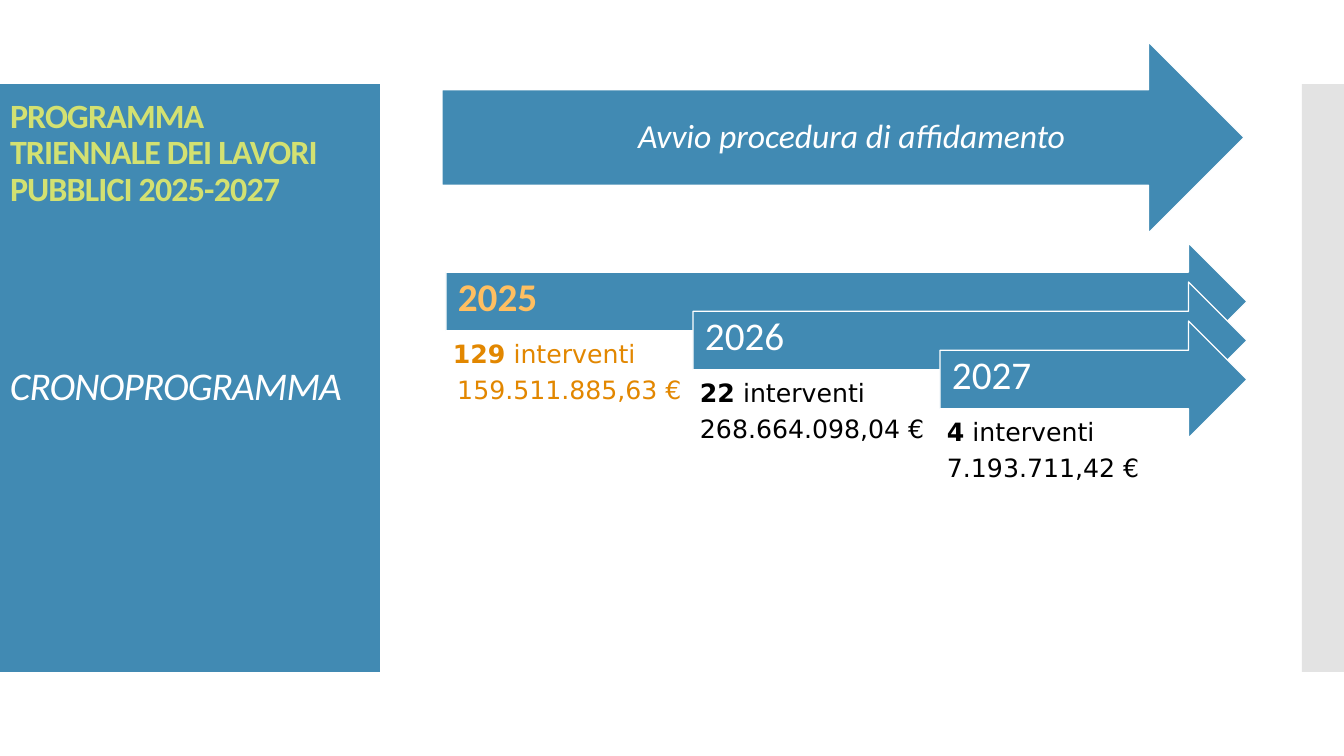
from pptx import Presentation
from pptx.dml.color import RGBColor
from pptx.enum.shapes import MSO_SHAPE
from pptx.enum.text import MSO_ANCHOR, MSO_AUTO_SIZE, PP_ALIGN
from pptx.util import Pt
from lxml.etree import SubElement
from pptx.oxml.ns import qn

TITLE = "PROGRAMMA TRIENNALE DEI LAVORI PUBBLICI 2025-2027"
SECTION = "CRONOPROGRAMMA"
PHASE = "Avvio procedura di affidamento"
YEARS = [
    ("2025", "129", "159.511.885,63 €", "amber", "orange", PP_ALIGN.CENTER, 133),
    ("2026", "22", "268.664.098,04 €", "white", "black", PP_ALIGN.LEFT, 225),
    ("2027", "4", "7.193.711,42 €", "white", "black", PP_ALIGN.LEFT, 222),
]
COLORS = {
    "blue": "418AB3", "grey": "C8C8C8", "lime": "D3E171", "amber": "FFBF61",
    "orange": "E28700", "white": "FFFFFF", "black": "000000",
}
EMU_PER_PX = 914400 / 100.8
SLIDE_W, SLIDE_H = 1344, 756
BAND_TOP, BAND_H = 84, 588
ARROW_LEFT, ARROW_TOP, ARROW_RIGHT, ARROW_H = 446, 243, 1247, 117
STEP_X, STEP_Y, NOTE_DROP = 247, 39, 92


def px(n):
    return round(n * EMU_PER_PX)


def rgb(name):
    return RGBColor.from_string(COLORS[name])


def add_shape(kind, x, y, w, h, fill, line=None, alpha=None):
    sp = s.shapes.add_shape(kind, px(x), px(y), px(w), px(h))
    sp.shadow.inherit = False
    sp.fill.solid()
    sp.fill.fore_color.rgb = rgb(fill)
    if alpha:
        color = sp.fill._xPr.find(qn("a:solidFill"))[0]
        SubElement(color, qn("a:alpha"), val=str(alpha * 1000))
    if line:
        sp.line.color.rgb = rgb(line)
        sp.line.width = Pt(0.85)
    else:
        sp.line.fill.background()
    return sp


def set_text(sp, paragraphs, size, color, font="Calibri", bold=False, italic=False,
             aligns=(PP_ALIGN.LEFT,), anchor=MSO_ANCHOR.MIDDLE,
             insets=(10, 0, 10, 0), after=0, spacing=0):
    tf = sp.text_frame
    tf.word_wrap = True
    tf.auto_size = MSO_AUTO_SIZE.NONE
    tf.vertical_anchor = anchor
    tf.margin_left, tf.margin_top, tf.margin_right, tf.margin_bottom = map(px, insets)
    for i, runs in enumerate(paragraphs):
        p = tf.add_paragraph() if i else tf.paragraphs[0]
        p.alignment = aligns[i]
        p.line_spacing = 0.9
        p.space_before = Pt(0)
        p.space_after = Pt(after)
        for j, text in enumerate(runs):
            r = p.add_run()
            r.text = text
            r.font.name = font
            r.font.size = Pt(size)
            r.font.bold = bold and j == 0
            r.font.italic = italic
            r.font.color.rgb = rgb(color)
            if spacing:
                r.font._element.set("spc", str(spacing))


prs = Presentation()
prs.slide_width, prs.slide_height = px(SLIDE_W), px(SLIDE_H)
s = prs.slides.add_slide(prs.slide_layouts[5])
title = s.shapes.title

panel = add_shape(MSO_SHAPE.RECTANGLE, 0, BAND_TOP, 380, BAND_H, "blue")
add_shape(MSO_SHAPE.RECTANGLE, 1302, BAND_TOP, 42, BAND_H, "grey", alpha=50)

title.left, title.top, title.width, title.height = map(px, (0, 98, 363, 112))
panel._element.addnext(title._element)
set_text(title, [[TITLE]], 24.3, "lime", bold=True, spacing=-60)

section = s.shapes.add_textbox(px(0), px(362), px(377), px(52))
set_text(section, [[SECTION]], 28, "white", italic=True, spacing=-60)

for i, (year, count, amount, year_color, note_color, align, note_h) in enumerate(YEARS):
    x, y = ARROW_LEFT + i * STEP_X, ARROW_TOP + i * STEP_Y
    arrow = add_shape(MSO_SHAPE.RIGHT_ARROW, x, y, ARROW_RIGHT - x, ARROW_H, "blue", "white")
    set_text(arrow, [[year]], 28, year_color, bold=i == 0, insets=(12, 12, 28, 18))
    note = add_shape(MSO_SHAPE.RECTANGLE, x, y + NOTE_DROP, STEP_X, note_h, "white", "white")
    set_text(note, [[count, " interventi"], [amount]], 18, note_color, font="DejaVu Sans",
             bold=True, aligns=(PP_ALIGN.LEFT, align), anchor=MSO_ANCHOR.TOP,
             insets=(7, 7, 7, 7), after=6.3)
    note.text_frame.paragraphs[1].runs[0].font.bold = False

phase = add_shape(MSO_SHAPE.RIGHT_ARROW, 442, 42, 802, 191, "blue", "white")
set_text(phase, [[PHASE]], 24, "white", italic=True, aligns=(PP_ALIGN.CENTER,),
         insets=(65, 27, 0, 27))

prs.save("out.pptx")
